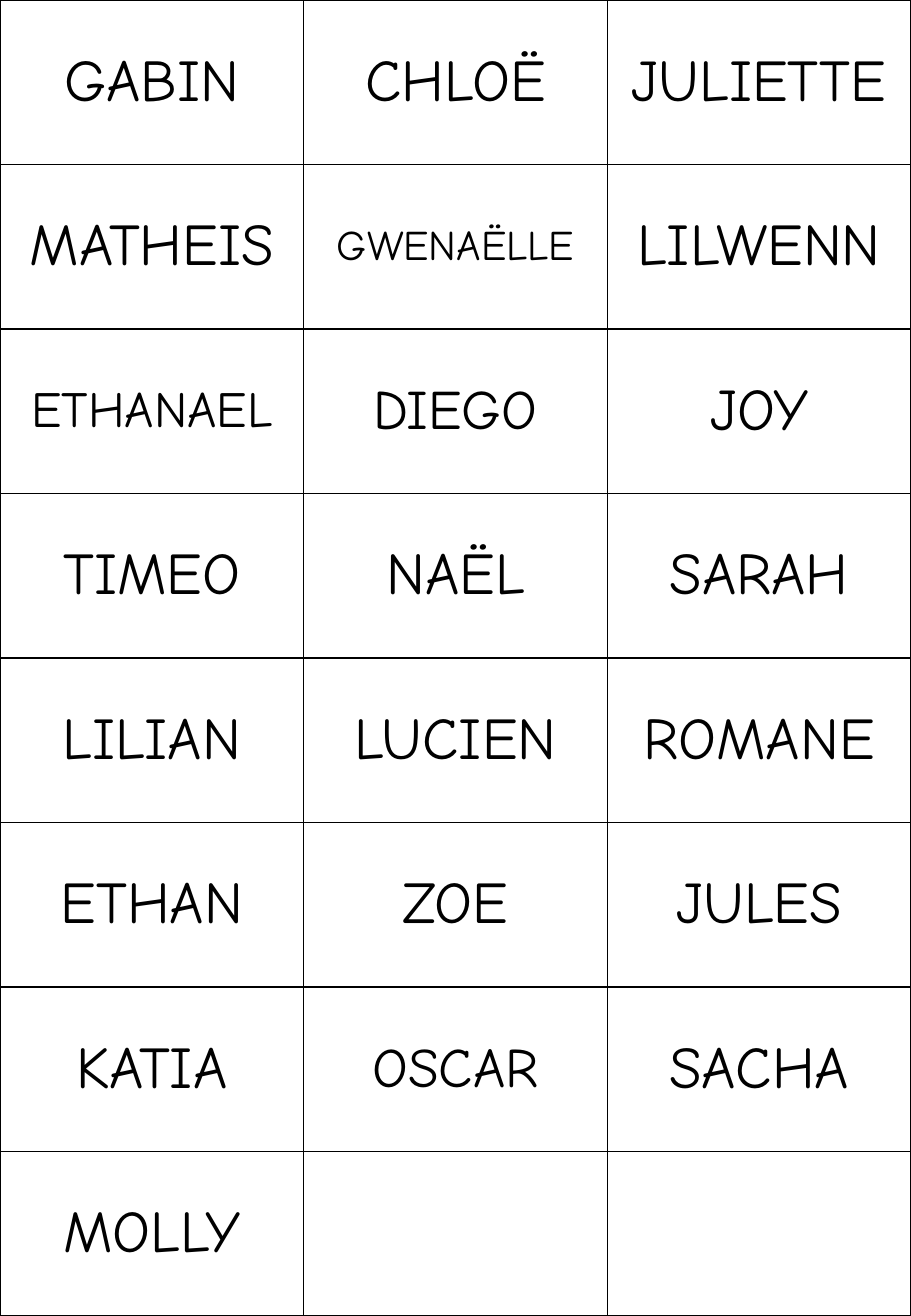
"""Build a sheet of first-name labels on a three-by-eight grid."""
import pptx
import pptx.util
import pptx.dml.color
import pptx.enum.text
import pptx.oxml
import pptx.oxml.ns

COLORS = {"ink": "000000", "paper": "FFFFFF"}
COLS, ROWS = 3, 8
NAMES = [
    "GABIN", "CHLOË", "JULIETTE",
    "MATHEIS", "GWENAËLLE", "LILWENN",
    "ETHANAEL", "DIEGO", "JOY",
    "TIMEO", "NAËL", "SARAH",
    "LILIAN", "LUCIEN", "ROMANE",
    "ETHAN", "ZOE", "JULES",
    "KATIA", "OSCAR", "SACHA",
    "MOLLY",
]
SIZES = {"GWENAËLLE": 25, "ETHANAEL": 30, "DIEGO": 33, "OSCAR": 33}
BORDER = (
    '<a:{side} {ns} w="12700"><a:solidFill><a:srgbClr val="{color}"/></a:solidFill>'
    '<a:prstDash val="solid"/></a:{side}>'
)

prs = pptx.Presentation()
prs.slide_width = pptx.util.Inches(7.5)
prs.slide_height = pptx.util.Inches(10.83)
s = prs.slides.add_slide(prs.slide_layouts[6])
table = s.shapes.add_table(ROWS, COLS, 0, 0, prs.slide_width, prs.slide_height).table
table.first_row = table.horz_banding = False
for col in table.columns:
    col.width = prs.slide_width // COLS
for row in table.rows:
    row.height = prs.slide_height // ROWS

for cell in table.iter_cells():
    tcPr = cell._tc.get_or_add_tcPr()
    for side in ("lnL", "lnR", "lnT", "lnB"):
        ns = pptx.oxml.ns.nsdecls("a")
        tcPr.append(pptx.oxml.parse_xml(BORDER.format(side=side, ns=ns, color=COLORS["ink"])))
    cell.fill.solid()
    cell.fill.fore_color.rgb = pptx.dml.color.RGBColor.from_string(COLORS["paper"])
    cell.vertical_anchor = pptx.enum.text.MSO_ANCHOR.MIDDLE

for i, name in enumerate(NAMES):
    p = table.cell(i // COLS, i % COLS).text_frame.paragraphs[0]
    p.alignment = pptx.enum.text.PP_ALIGN.CENTER
    r = p.add_run()
    r.text = name
    style = {"name": "Comic Neue", "size": pptx.util.Pt(SIZES.get(name, 35)), "bold": False}
    for key, value in style.items():
        setattr(r.font, key, value)
    r.font.color.rgb = pptx.dml.color.RGBColor.from_string(COLORS["ink"])

prs.save("out.pptx")
